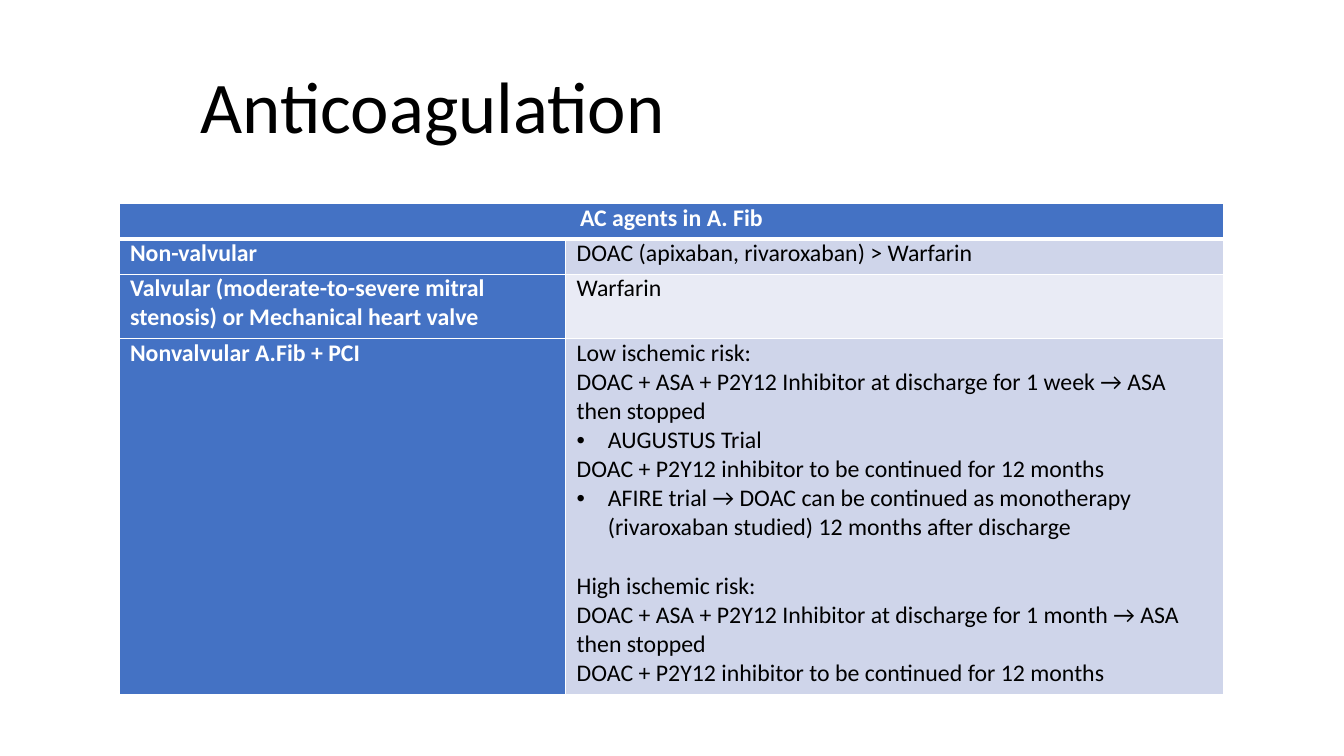
from dataclasses import dataclass

from pptx import Presentation
from pptx.dml.color import RGBColor
from pptx.enum import text
from pptx.oxml.ns import qn
from pptx.util import Inches, Pt
from lxml import etree


@dataclass(frozen=True)
class Theme:
    font: str = "Calibri"
    title_size: int = 52
    table_size: int = 17
    ink: str = "000000"
    paper: str = "FFFFFF"
    heading: str = "4472C4"
    bands: tuple = ("CFD5EA", "E9EBF5")
    rule: float = 1
    header_rule: float = 3
    bullet_indent: float = 0.31
    section_gap: float = 20.75


BULLET = "• "
COLUMN_WIDTHS = (4.43, 6.53)
ROW_HEIGHTS = (0.35, 0.35, 0.64, 3.53)
HEADER = "AC agents in A. Fib"
CONTINUATION = "DOAC + P2Y12 inhibitor to be continued for 12 months"
HIGH_RISK = "High ischemic risk:"
AGENTS = (
    ("Non-valvular", ["DOAC (apixaban, rivaroxaban) > Warfarin"]),
    ("Valvular (moderate-to-severe mitral stenosis) or Mechanical heart valve",
     ["Warfarin"]),
    ("Nonvalvular A.Fib + PCI", [
        "Low ischemic risk:",
        "DOAC + ASA + P2Y12 Inhibitor at discharge for 1 week → ASA then stopped",
        BULLET + "AUGUSTUS Trial",
        CONTINUATION,
        BULLET + "AFIRE trial → DOAC can be continued as monotherapy "
                 "(rivaroxaban studied) 12 months after discharge",
        HIGH_RISK,
        "DOAC + ASA + P2Y12 Inhibitor at discharge for 1 month → ASA then stopped",
        CONTINUATION,
    ]),
)


class SlideBuilder:
    def __init__(self, slide, theme):
        self.slide = slide
        self.theme = theme

    def style(self, paragraph, size, color, bold=False):
        font = paragraph.font
        font.name = self.theme.font
        font.size = Pt(size)
        font.bold = bold
        font.color.rgb = RGBColor.from_string(color)

    def title(self, wording, left, top, width, height):
        title = self.slide.shapes.title
        title.left, title.top = Inches(left), Inches(top)
        title.width, title.height = Inches(width), Inches(height)
        frame = title.text_frame
        frame.text = wording
        frame.auto_size = text.MSO_AUTO_SIZE.NONE
        frame.vertical_anchor = text.MSO_ANCHOR.MIDDLE
        heading = frame.paragraphs[0]
        heading.alignment = text.PP_ALIGN.CENTER
        heading.line_spacing = 0.9
        self.style(heading, self.theme.title_size, self.theme.ink)

    def bullet(self, paragraph):
        indent = Inches(self.theme.bullet_indent)
        properties = paragraph._p.get_or_add_pPr()
        properties.set("marL", str(indent))
        properties.set("indent", str(-indent))
        etree.SubElement(properties, qn("a:buFont"), typeface="Arial")
        etree.SubElement(properties, qn("a:buChar"), char=BULLET.strip())

    def borders(self, cell, top, bottom):
        properties = cell._tc.get_or_add_tcPr()
        widths = {"L": self.theme.rule, "R": self.theme.rule, "T": top, "B": bottom}
        for side, width in widths.items():
            line = etree.SubElement(properties, qn(f"a:ln{side}"), w=str(Pt(width)))
            fill = etree.SubElement(line, qn("a:solidFill"))
            etree.SubElement(fill, qn("a:srgbClr"), val=self.theme.paper)

    def cell(self, cell, lines, fill, color, bold=False, top=None, bottom=None):
        self.borders(cell, top or self.theme.rule, bottom or self.theme.rule)
        cell.fill.solid()
        cell.fill.fore_color.rgb = RGBColor.from_string(fill)
        cell.margin_left = cell.margin_right = Inches(0.11)
        cell.margin_top = cell.margin_bottom = 0
        cell.text_frame.text = "\n".join(line.removeprefix(BULLET) for line in lines)
        for line, paragraph in zip(lines, cell.text_frame.paragraphs):
            self.style(paragraph, self.theme.table_size, color, bold)
            if line.startswith(BULLET):
                self.bullet(paragraph)
            if line == HIGH_RISK:
                paragraph.space_before = Pt(self.theme.section_gap)

    def agent_table(self, left, top):
        theme = self.theme
        table = self.slide.shapes.add_table(
            len(ROW_HEIGHTS), len(COLUMN_WIDTHS), Inches(left), Inches(top),
            Inches(sum(COLUMN_WIDTHS)), Inches(sum(ROW_HEIGHTS))).table
        for column, width in zip(table.columns, COLUMN_WIDTHS):
            column.width = Inches(width)
        for row, height in zip(table.rows, ROW_HEIGHTS):
            row.height = Inches(height)

        header, spanned = table.rows[0].cells
        for cell, lines in ((header, [HEADER]), (spanned, [])):
            self.cell(cell, lines, theme.heading, theme.paper, bold=True,
                      bottom=theme.header_rule)
        header.merge(spanned)
        header.text_frame.paragraphs[0].alignment = text.PP_ALIGN.CENTER

        for index, (condition, therapy) in enumerate(AGENTS):
            condition_cell, therapy_cell = table.rows[index + 1].cells
            rule = theme.rule if index else theme.header_rule
            self.cell(condition_cell, [condition], theme.heading, theme.paper,
                      bold=True, top=rule)
            self.cell(therapy_cell, therapy, theme.bands[index % 2], theme.ink, top=rule)


def main():
    deck = Presentation()
    deck.slide_width, deck.slide_height = Inches(13.33), Inches(7.5)
    title_only = deck.slide_layouts[5]
    builder = SlideBuilder(deck.slides.add_slide(title_only), Theme())
    builder.title("Anticoagulation", 0.92, 0.38, 6.74, 1.43)
    builder.agent_table(1.18, 2.02)
    deck.save("out.pptx")


if __name__ == "__main__":
    main()
